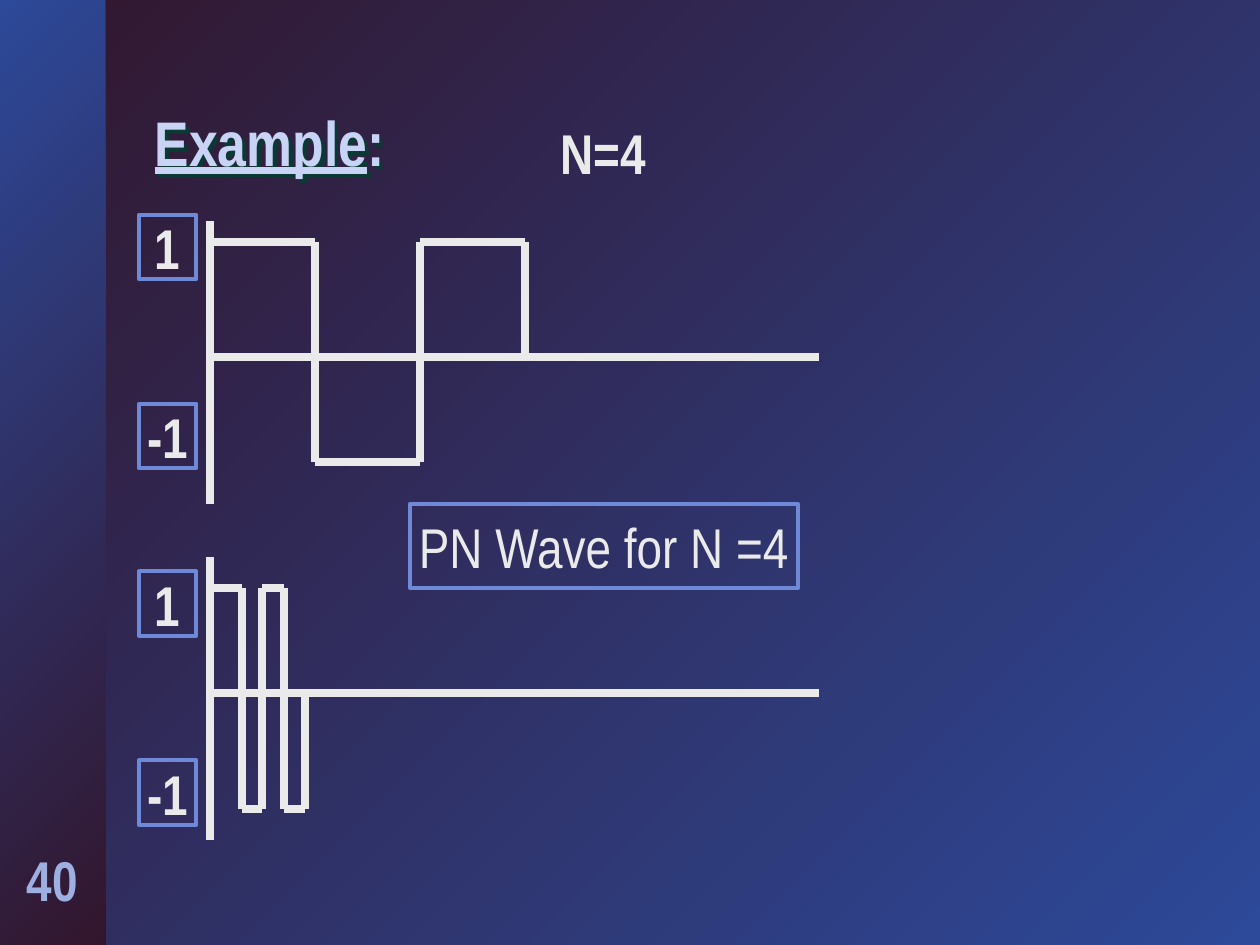
from lxml import etree
from pptx import Presentation
from pptx.dml.color import RGBColor
from pptx.enum.shapes import MSO_CONNECTOR, MSO_SHAPE
from pptx.enum.text import MSO_ANCHOR, PP_ALIGN
from pptx.oxml.ns import qn
from pptx.util import Cm, Pt

STRAIGHT = MSO_CONNECTOR.STRAIGHT
RECTANGLE = MSO_SHAPE.RECTANGLE
LEFT, CENTER = PP_ALIGN.LEFT, PP_ALIGN.CENTER
TOP, MIDDLE = MSO_ANCHOR.TOP, MSO_ANCHOR.MIDDLE

FONT = "Arial Narrow"
COLORS = {
    "dark": "32162D", "blue": "2D4999", "ink": "EAEAEA", "frame": "6D89D7",
    "title": "C8D3F6", "title shadow": "0A3A33", "number": "9EB0E2",
}

# All lengths below are in centimetres.
TITLE = ("Example", ":")
AXIS_LEFT, AXIS_RIGHT, AXIS_HEIGHT = 4.23, 16.51, 5.71
# The frames leave room around the widest label, "-1".
LABEL_LEFT, LABEL_WIDTH, LABEL_HEIGHT = 2.8, 1.16, 1.3
WAVES = [
    {"top": 4.45, "heights": {1: 4.87, 0: 7.2, -1: 9.31},
     "edges": [4.23, 6.35, 8.47, 10.58], "values": [1, -1, 1],
     "labels": {"1": 4.33, "-1": 8.14}},
    {"top": 11.22, "heights": {1: 11.85, 0: 13.97, -1: 16.3},
     "edges": [4.23, 4.87, 5.29, 5.72, 6.14], "values": [1, -1, 1, -1],
     "labels": {"1": 11.52, "-1": 15.33}},
]


def color(name):
    return RGBColor.from_string(COLORS[name])


def set_gradient(fill, start, end):
    """Fill from the top left corner to the bottom right one."""
    fill.gradient()
    fill.gradient_angle = 315
    for stop, name in zip(fill.gradient_stops, (start, end)):
        stop.color.rgb = color(name)


def add_line(slide, x1, y1, x2, y2):
    line = slide.shapes.add_connector(STRAIGHT, Cm(x1), Cm(y1), Cm(x2), Cm(y2))
    line.line.color.rgb = color("ink")
    line.line.width = Pt(4.5)
    etree.SubElement(line._element.spPr, qn("a:effectLst"))


def write(shape, runs, size=32, ink="ink", bold=True, align=CENTER,
          anchor=MIDDLE, wrap=False):
    frame = shape.text_frame
    frame.word_wrap = wrap
    frame.vertical_anchor = anchor
    paragraph = frame.paragraphs[0]
    paragraph.alignment = align
    for text in runs:
        paragraph.add_run().text = text
    font = paragraph.font
    font.name, font.size, font.bold = FONT, Pt(size), bold
    font.color.rgb = color(ink)


def add_text(slide, box, runs, **style):
    shape = slide.shapes.add_textbox(*map(Cm, box))
    write(shape, runs, **style)
    return shape


def add_framed_text(slide, box, text, **style):
    shape = slide.shapes.add_shape(RECTANGLE, *map(Cm, box))
    shape.shadow.inherit = False
    shape.fill.background()
    shape.line.color.rgb = color("frame")
    shape.line.width = Pt(2.25)
    write(shape, [text], **style)


def add_text_shadow(shape):
    """Give an unfilled text box a shadow, which falls from its letters."""
    effects = etree.SubElement(shape._element.spPr, qn("a:effectLst"))
    shadow = etree.SubElement(effects, qn("a:outerShdw"), dist=str(Pt(3)),
                              dir="2700000", algn="ctr", rotWithShape="0")
    etree.SubElement(shadow, qn("a:srgbClr"), val=COLORS["title shadow"])


def add_title(slide):
    title = add_text(slide, (2.87, 2.11, 20.12, 1.68), TITLE, size=36,
                     ink="title", align=LEFT, wrap=True)
    paragraph = title.text_frame.paragraphs[0]
    paragraph.line_spacing = 0.9
    paragraph.runs[0].font.underline = True
    add_text_shadow(title)


def add_wave(slide, wave):
    heights, edges, values = wave["heights"], wave["edges"], wave["values"]
    add_line(slide, AXIS_LEFT, wave["top"], AXIS_LEFT, wave["top"] + AXIS_HEIGHT)
    add_line(slide, AXIS_LEFT, heights[0], AXIS_RIGHT, heights[0])
    for start, end, value, following in zip(edges, edges[1:], values, values[1:] + [0]):
        add_line(slide, start, heights[value], end, heights[value])
        add_line(slide, end, heights[value], end, heights[following])
    for text, top in wave["labels"].items():
        add_framed_text(slide, (LABEL_LEFT, top, LABEL_WIDTH, LABEL_HEIGHT), text)


def main():
    presentation = Presentation()
    presentation.slide_width, presentation.slide_height = Cm(25.4), Cm(19.05)
    slide = presentation.slides.add_slide(presentation.slide_layouts[6])
    set_gradient(slide.background.fill, "dark", "blue")

    side_band = slide.shapes.add_shape(RECTANGLE, 0, 0, Cm(2.12), Cm(19.05))
    side_band.shadow.inherit = False
    side_band.line.fill.background()
    set_gradient(side_band.fill, "blue", "dark")
    add_text(slide, (0.21, 16.93, 1.69, 1.6), ["40"], ink="number", anchor=TOP)

    add_title(slide)
    add_text(slide, (9.31, 2.33, 5.72, 1.48), ["N=4"])
    for wave in WAVES:
        add_wave(slide, wave)
    add_framed_text(slide, (8.26, 10.16, 7.83, 1.69), "PN Wave for N =4", bold=False)

    presentation.save("out.pptx")


if __name__ == "__main__":
    main()
